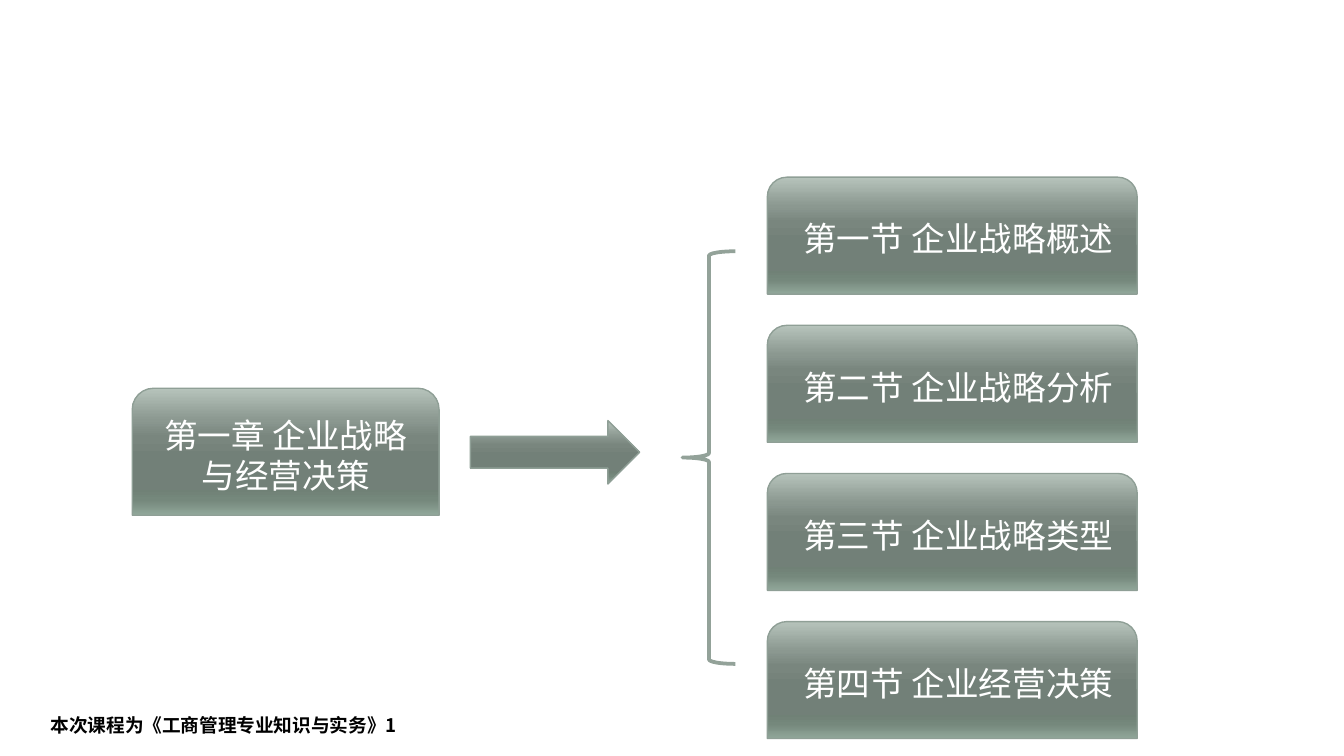
from dataclasses import dataclass

from lxml.etree import SubElement
from pptx import Presentation
from pptx.dml.color import RGBColor
from pptx.enum.shapes import MSO_SHAPE
from pptx.enum.text import MSO_ANCHOR, PP_ALIGN
from pptx.oxml.ns import qn
from pptx.shapes.autoshape import Shape
from pptx.slide import Slide
from pptx.text.text import _Paragraph as Paragraph
from pptx.util import Cm, Pt


@dataclass(frozen=True)
class Theme:
    gradient: tuple = ((0, "B6C3BB"), (25, "8B9890"), (38, "79867E"), (55, "728078"),
                       (80, "708176"), (88, "75887C"), (100, "91A79A"))
    outline: str = "8F9F96"
    brace: str = "93A299"
    box_text: str = "FFFFFF"
    footer_text: str = "000000"
    box_font: str = "TeX Gyre Adventor"
    footer_font: str = "Noto Sans CJK SC"
    box_size: float = 18
    footer_size: float = 10


@dataclass(frozen=True)
class Area:
    """Position and size in centimetres."""
    left: float
    top: float
    width: float
    height: float

    def lengths(self) -> tuple:
        return Cm(self.left), Cm(self.top), Cm(self.width), Cm(self.height)


THEME = Theme()
CHAPTER = "第一章 企业战略与经营决策"
SECTIONS = ("第一节 企业战略概述", "第二节 企业战略分析",
            "第三节 企业战略类型", "第四节 企业经营决策")
FIRST_SECTION = Area(5.71 * 2.54, 3.35, 6.99, 2.21)
SECTION_PITCH = 2.8


def add_outlined(slide: Slide, kind: MSO_SHAPE, area: Area, color: str, width: float) -> Shape:
    shape = slide.shapes.add_shape(kind, *area.lengths())
    shape.shadow.inherit = False
    shape.line.color.rgb = RGBColor.from_string(color)
    shape.line.width = Pt(width)
    return shape


def add_gradient_shape(slide: Slide, kind: MSO_SHAPE, area: Area) -> Shape:
    shape = add_outlined(slide, kind, area, THEME.outline, 0.75)
    shape.fill.gradient()
    shape.fill.gradient_angle = 270  # counter-clockwise, so top to bottom
    stops = shape.element.spPr.find(qn("a:gradFill")).find(qn("a:gsLst"))
    for stop in list(stops):
        stops.remove(stop)
    for percent, color in THEME.gradient:
        stop = SubElement(stops, qn("a:gs"), pos=str(percent * 1000))
        SubElement(stop, qn("a:srgbClr"), val=color)
    return shape


def style_text(paragraph: Paragraph, font: str, size: float, color: str) -> None:
    paragraph.font.name = font
    paragraph.font.size = Pt(size)
    paragraph.font.color.rgb = RGBColor.from_string(color)


def add_box(slide: Slide, area: Area, text: str) -> Paragraph:
    shape = add_gradient_shape(slide, MSO_SHAPE.ROUND_2_SAME_RECTANGLE, area)
    frame = shape.text_frame
    frame.word_wrap = True
    frame.vertical_anchor = MSO_ANCHOR.MIDDLE
    paragraph = frame.paragraphs[0]
    paragraph.text = text
    paragraph.alignment = PP_ALIGN.CENTER
    style_text(paragraph, THEME.box_font, THEME.box_size, THEME.box_text)
    return paragraph


def add_section(slide: Slide, index: int, text: str) -> None:
    first = FIRST_SECTION
    area = Area(first.left, first.top + index * SECTION_PITCH, first.width, first.height)
    paragraph = add_box(slide, area, text)
    paragraph.space_before = Pt(0.15 * THEME.box_size)
    paragraph._p.get_or_add_pPr().set("marL", str(Cm(0.23)))


def add_footer(slide: Slide, area: Area, text: str) -> None:
    frame = slide.shapes.add_textbox(*area.lengths()).text_frame
    frame.word_wrap = True
    paragraph = frame.paragraphs[0]
    paragraph.text = text
    paragraph.font.bold = True
    style_text(paragraph, THEME.footer_font, THEME.footer_size, THEME.footer_text)


def main() -> None:
    presentation = Presentation()
    presentation.slide_width, presentation.slide_height = Cm(25.4), Cm(14.29)
    slide = presentation.slides.add_slide(presentation.slide_layouts[6])

    # Course footer
    add_footer(slide, Area(0.71, 13.36, 16.03, 0.69), "本次课程为《工商管理专业知识与实务》1")

    # Chapter and its sections
    add_box(slide, Area(2.5, 7.34, 5.8, 2.4), CHAPTER)
    for index, text in enumerate(SECTIONS):
        add_section(slide, index, text)

    # Arrow and brace leading from the chapter to the sections
    add_gradient_shape(slide, MSO_SHAPE.RIGHT_ARROW, Area(8.89, 7.95, 3.2, 1.2))
    brace = add_outlined(slide, MSO_SHAPE.LEFT_BRACE, Area(12.9, 4.75, 1, 7.8), THEME.brace, 2)
    brace.fill.background()

    presentation.save("out.pptx")


if __name__ == "__main__":
    main()
